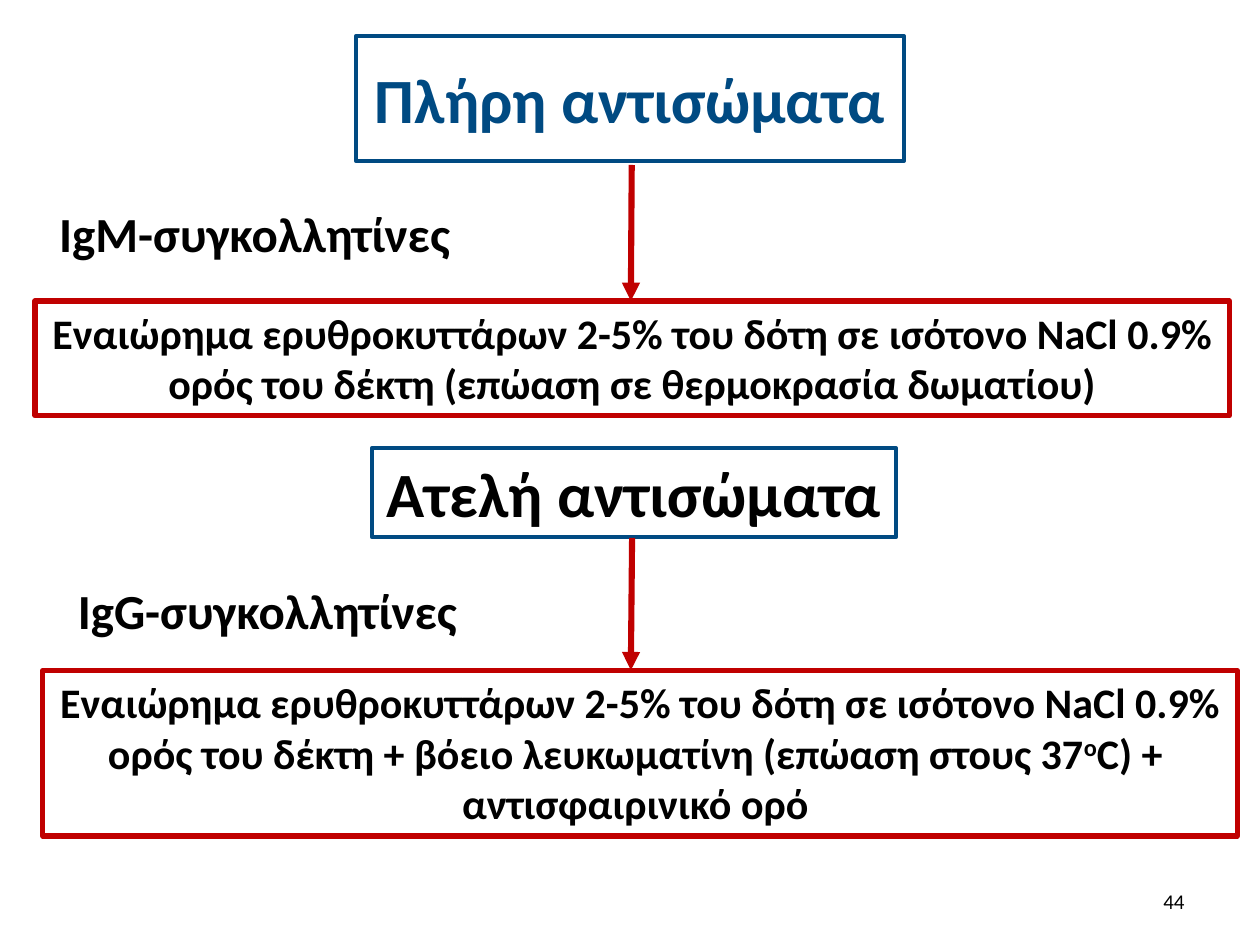
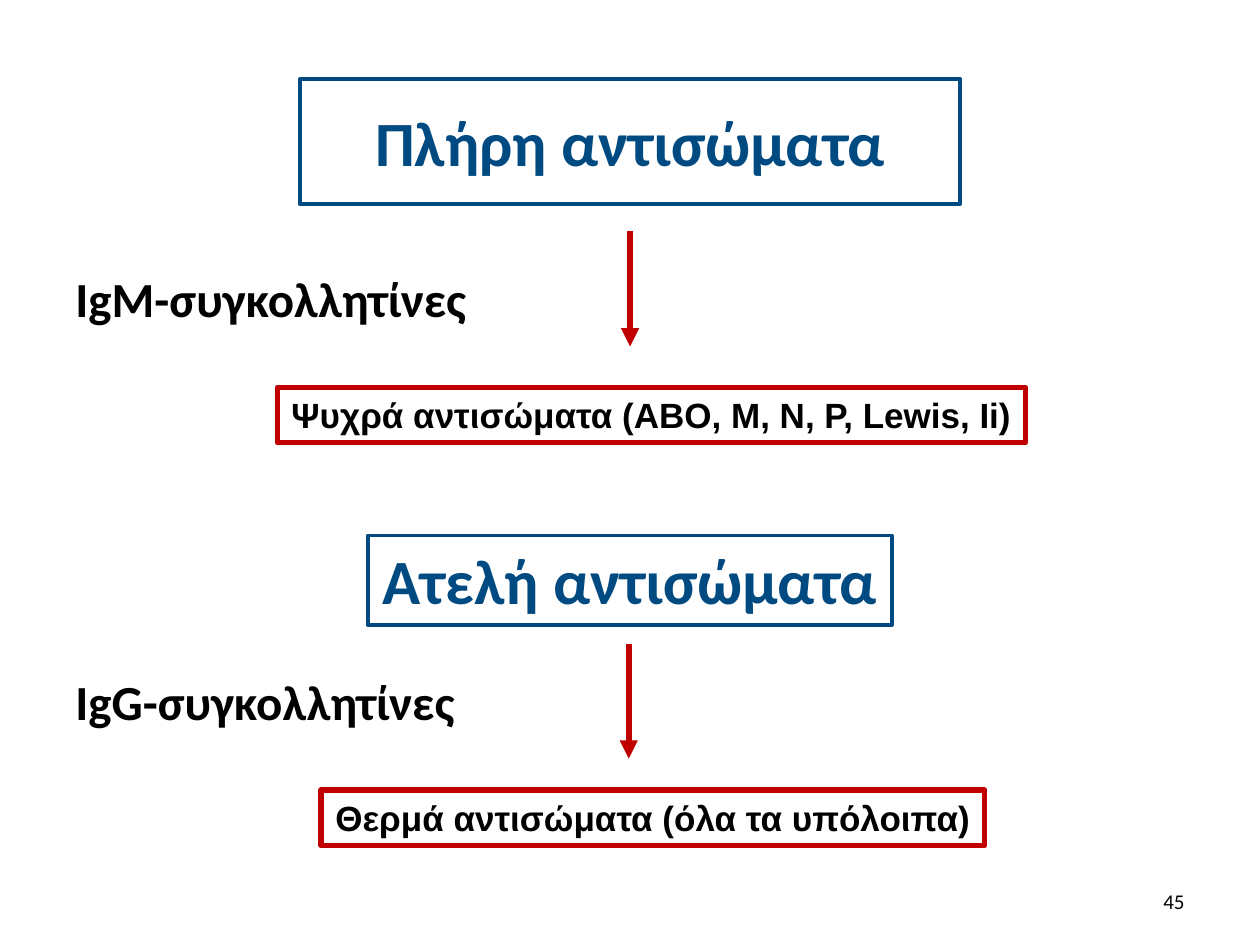
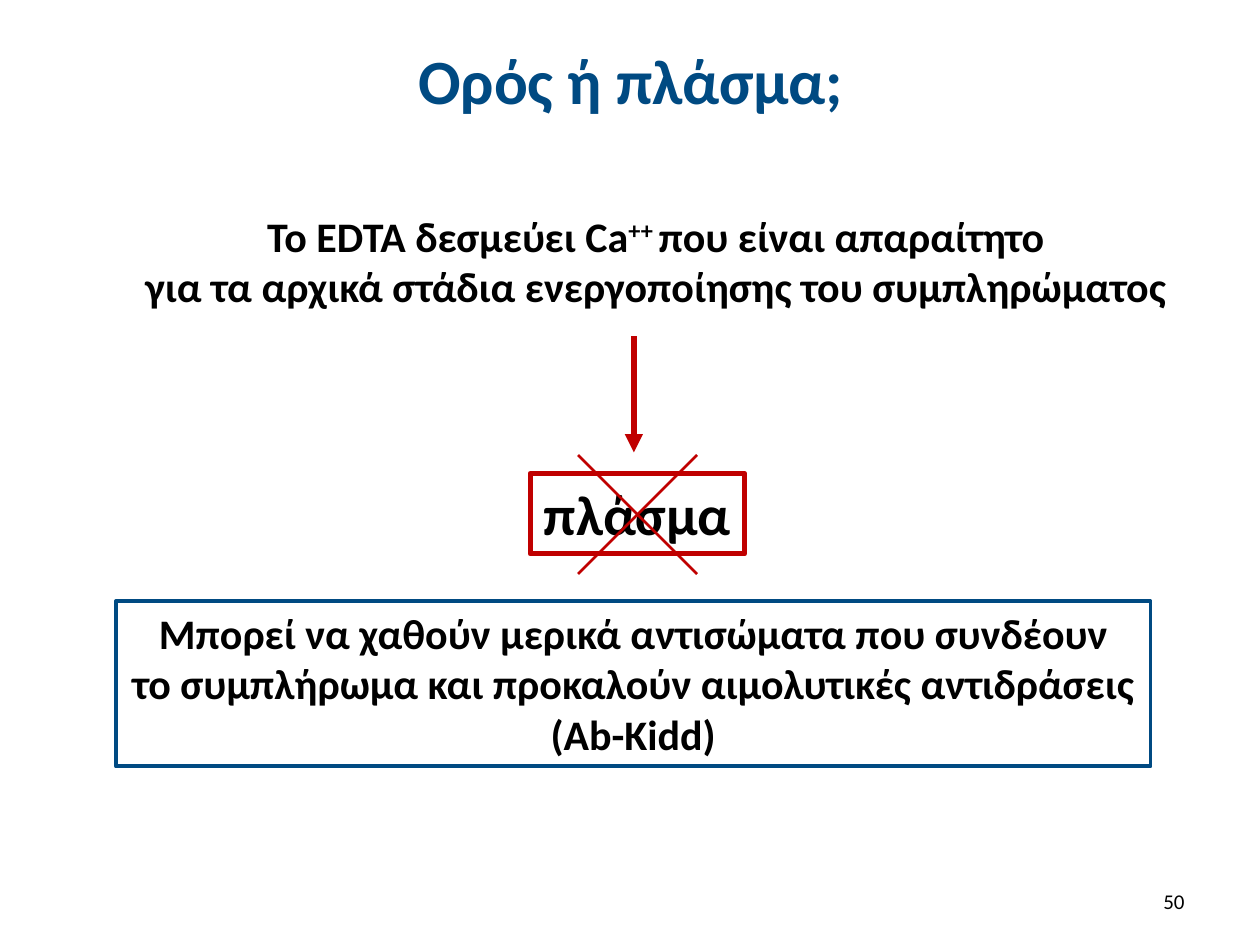
from lxml.etree import SubElement
from pptx import Presentation
from pptx.dml.color import RGBColor
from pptx.enum.shapes import MSO_CONNECTOR, MSO_SHAPE
from pptx.enum.text import MSO_ANCHOR, PP_ALIGN
from pptx.oxml.ns import qn
from pptx.util import Pt

BLUE = RGBColor(0x00, 0x4A, 0x82)
RED = RGBColor(0xC0, 0x00, 0x00)
BLACK = RGBColor(0x00, 0x00, 0x00)

# Shared text styles
TITLE = dict(size=36, color=BLUE, wrap=True, anchor=MSO_ANCHOR.MIDDLE)
FRAMED_TITLE = dict(TITLE, border=BLUE, border_width=2.25)
SUBTITLE = dict(size=36, color=BLUE, border=BLUE, border_width=2.25)
LABEL = dict(size=28, align=PP_ALIGN.LEFT)
STATEMENT = dict(size=24)
METHOD = dict(STATEMENT, border=RED)
EXAMPLES = dict(size=20, font="Arial", border=RED)
PLASMA = dict(size=32, border=RED)
CONSEQUENCE = dict(STATEMENT, border=BLUE, border_width=2.25)
PAGE_NUMBER = dict(size=12, bold=False, align=PP_ALIGN.RIGHT, wrap=True,
                   anchor=MSO_ANCHOR.MIDDLE)
PAGE_NUMBER_AREA = (516, 500.5, 168, 28.8)

COMPLETE, INCOMPLETE = "Πλήρη αντισώματα", "Ατελή αντισώματα"
IGM, IGG = "IgM-συγκολλητίνες", "IgG-συγκολλητίνες"
SUSPENSION = "Εναιώρημα ερυθροκυττάρων 2-5% του δότη σε ισότονο NaCl 0.9%"

# Text entries: lines, (left, top, width, height), style; ^...^ is superscript
# Arrows: start x, start y, end x, end y
SLIDES = [
    dict(
        page="44",
        texts=[
            ([COMPLETE], (203.3, 20.6, 313.2, 71.4), FRAMED_TITLE),
            ([IGM], (26.8, 112.5, 240.5, 41.2), LABEL),
            ([SUSPENSION, "ορός του δέκτη (επώαση σε θερμοκρασία δωματίου)"],
             (20, 172, 682.5, 65.5), METHOD),
            ([INCOMPLETE], (212.5, 256, 299.5, 51), dict(SUBTITLE, color=BLACK)),
            ([IGG], (37.4, 328, 233.3, 41.2), LABEL),
            ([SUSPENSION,
              "ορός του δέκτη + βόειο λευκωματίνη (επώαση στους 37^o^C) + ",
              "αντισφαιρινικό ορό "],
             (24.5, 383.3, 682.5, 94.5), METHOD),
        ],
        arrows=[(361, 94.3, 360.5, 172), (361.2, 307.4, 360.5, 383)],
    ),
    dict(
        page="45",
        texts=[
            ([COMPLETE], (171.4, 45.2, 377.3, 71.4), FRAMED_TITLE),
            ([IGM], (36, 149.8, 240.5, 41.2), LABEL),
            (["Ψυχρά αντισώματα (ΑΒΟ, Μ, Ν, P, Lewis, Ii)"],
             (158.4, 221.5, 427.7, 31.5), EXAMPLES),
            ([INCOMPLETE], (210.2, 306, 299.5, 51), SUBTITLE),
            ([IGG], (36, 380.2, 233.3, 41.2), LABEL),
            (["Θερμά αντισώματα (όλα τα υπόλοιπα)"],
             (183.4, 451.5, 379.4, 31.5), EXAMPLES),
        ],
        arrows=[(360, 132, 360, 198), (359.3, 367.8, 359.3, 433.5)],
    ),
    dict(
        page="50",
        texts=[
            (["Ορός ή πλάσμα;"], (36.5, 9.5, 648, 71.4), TITLE),
            (["Το EDTA δεσμεύει Ca^++ ^που είναι απαραίτητο",
              "για τα αρχικά στάδια ενεργοποίησης του συμπληρώματος"],
             (73.4, 116.8, 602.6, 65.5), STATEMENT),
            (["πλάσμα"], (303, 270.5, 122.5, 46), PLASMA),
            (["Μπορεί να χαθούν μερικά αντισώματα που συνδέουν",
              "το συμπλήρωμα και προκαλούν αιμολυτικές αντιδράσεις",
              "(Ab-Kidd)"],
             (66.3, 343.5, 591.2, 94.5), CONSEQUENCE),
        ],
        arrows=[(362.2, 192.3, 362.2, 258.5)],
        cross=(330.3, 260, 398.3, 328),
    ),
]


def add_text(slide, lines, area, *, size, font="Calibri", color=BLACK,
             bold=True, align=PP_ALIGN.CENTER, anchor=MSO_ANCHOR.TOP,
             wrap=False, border=None, border_width=3):
    place = [Pt(value) for value in area]
    if border is None:
        box = slide.shapes.add_textbox(*place)
    else:
        box = slide.shapes.add_shape(MSO_SHAPE.RECTANGLE, *place)
        box.shadow.inherit = False
        box.fill.background()
        box.line.color.rgb = border
        box.line.width = Pt(border_width)
    frame = box.text_frame
    frame.word_wrap = wrap
    frame.vertical_anchor = anchor
    for index, line in enumerate(lines):
        paragraph = frame.paragraphs[0] if index == 0 else frame.add_paragraph()
        paragraph.alignment = align
        for part, words in enumerate(line.split("^")):
            run = paragraph.add_run()
            run.text = words
            run.font.name = font
            run.font.size = Pt(size)
            run.font.bold = bold
            run.font.color.rgb = color
            if part % 2:
                run._r.get_or_add_rPr().set("baseline", "30000")


def add_line(slide, ends, width, arrow=False):
    line = slide.shapes.add_connector(MSO_CONNECTOR.STRAIGHT,
                                      *[Pt(value) for value in ends])
    line.line.color.rgb = RED
    line.line.width = Pt(width)
    if arrow:
        SubElement(line.line._get_or_add_ln(), qn("a:tailEnd"), type="triangle")
    SubElement(line._element.spPr, qn("a:effectLst"))


def main():
    deck = Presentation()
    deck.slide_width, deck.slide_height = Pt(720), Pt(540)
    for content in SLIDES:
        slide = deck.slides.add_slide(deck.slide_layouts[6])
        for lines, area, style in content["texts"]:
            add_text(slide, lines, area, **style)
        for ends in content["arrows"]:
            add_line(slide, ends, 3.5, arrow=True)
        # Strike out the rejected sample
        if "cross" in content:
            left, top, right, bottom = content["cross"]
            add_line(slide, (left, top, right, bottom), 1.5)
            add_line(slide, (right, top, left, bottom), 1.5)
        add_text(slide, [content["page"]], PAGE_NUMBER_AREA, **PAGE_NUMBER)
    deck.save("out.pptx")


if __name__ == "__main__":
    main()
